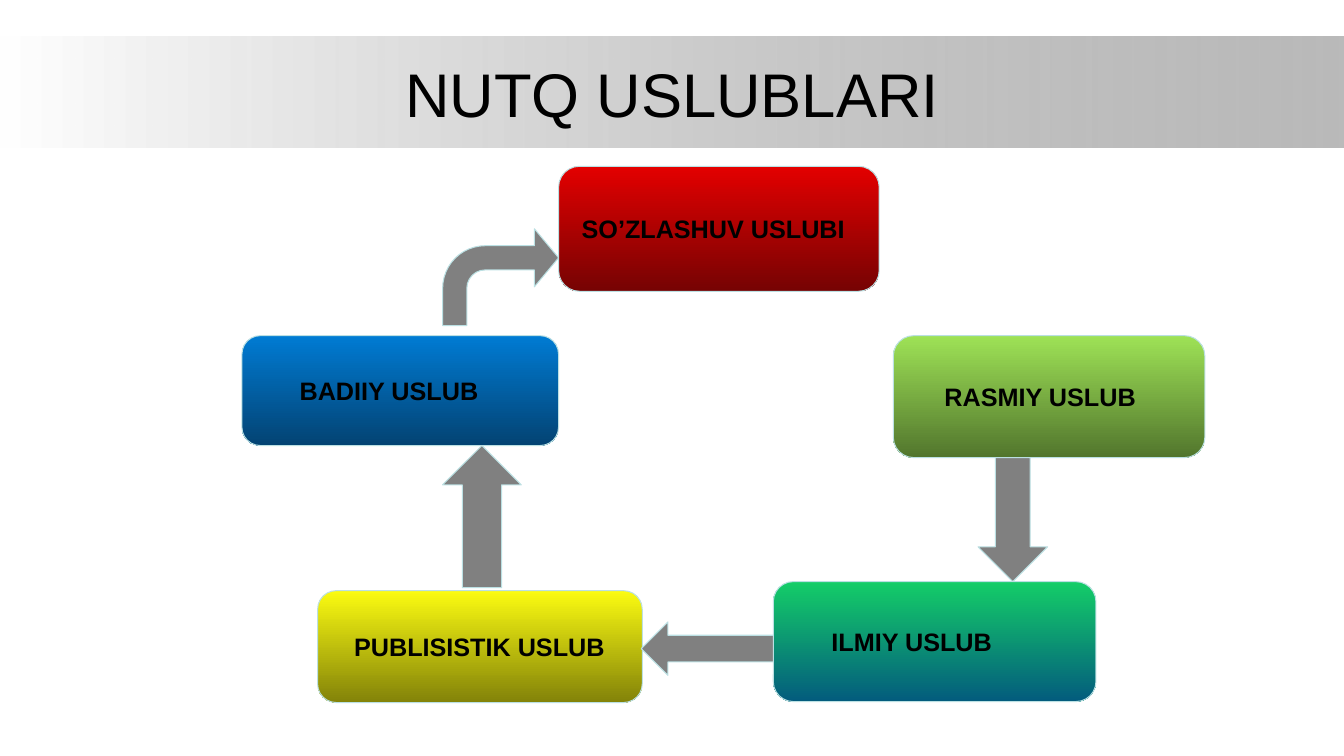
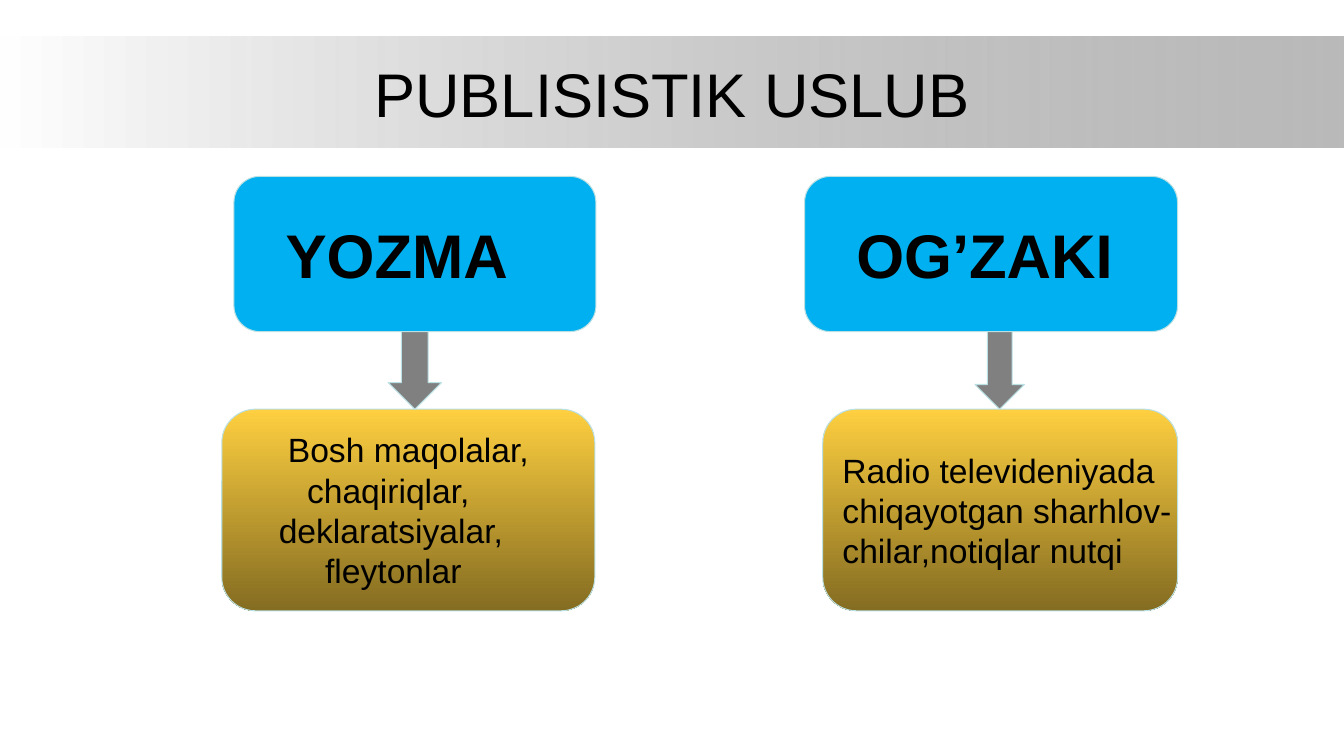
from lxml import etree
from pptx import Presentation
from pptx.dml.color import RGBColor
from pptx.enum.shapes import MSO_SHAPE
from pptx.enum.text import MSO_ANCHOR, PP_ALIGN
from pptx.oxml.ns import qn
from pptx.util import Inches, Pt

RECTANGLE = MSO_SHAPE.RECTANGLE
ROUNDED = MSO_SHAPE.ROUNDED_RECTANGLE
PROCESS = MSO_SHAPE.FLOWCHART_ALTERNATE_PROCESS
BENT, UP = MSO_SHAPE.BENT_ARROW, MSO_SHAPE.UP_ARROW
DOWN, LEFT = MSO_SHAPE.DOWN_ARROW, MSO_SHAPE.LEFT_ARROW
MIDDLE = MSO_ANCHOR.MIDDLE
CENTER, ALIGN_LEFT = PP_ALIGN.CENTER, PP_ALIGN.LEFT

SLIDE_WIDTH, SLIDE_HEIGHT = 13.33, 7.5
FONT = "Arial"
BLACK, WHITE, GRAY = "000000", "FFFFFF", "808080"
OUTLINE, SKY = "BBE0E3", "00B0F0"
GOLD = ("FECF40", "846C21")
BAND_OPACITY = 54
TITLE_SIZE = 44
RIGHTWARD, DOWNWARD = 0, 270


def color(value):
    return RGBColor.from_string(value)


def paint(shape, fill, angle=DOWNWARD):
    """Fill with one hex colour, or with a pair as a linear gradient."""
    if isinstance(fill, str):
        shape.fill.solid()
        shape.fill.fore_color.rgb = color(fill)
        return
    shape.fill.gradient()
    shape.fill.gradient_angle = angle
    for stop, value in zip(shape.fill.gradient_stops, fill):
        stop.color.rgb = color(value)


def add_shape(slide, kind, box, fill, angle=DOWNWARD, outline=OUTLINE):
    shape = slide.shapes.add_shape(kind, *map(Inches, box))
    shape.shadow.inherit = False
    paint(shape, fill, angle)
    if outline:
        shape.line.color.rgb = color(outline)
        shape.line.width = Pt(0.75)
    else:
        shape.line.fill.background()
    return shape


def write_lines(frame, lines, size, bold=False, align=ALIGN_LEFT):
    """Write (text, indent in inches) lines, vertically centred."""
    frame.vertical_anchor = MIDDLE
    style = {"name": FONT, "size": Pt(size), "bold": bold}
    for index, (text, indent) in enumerate(lines):
        paragraph = frame.paragraphs[0] if index == 0 else frame.add_paragraph()
        paragraph.alignment = align
        if indent:
            paragraph._p.get_or_add_pPr().set("marL", str(Inches(indent)))
        run = paragraph.add_run()
        run.text = text
        for name, value in style.items():
            setattr(run.font, name, value)
        run.font.color.rgb = color(BLACK)


def add_card(slide, box, fill, lines, size, bold=True, kind=ROUNDED):
    card = add_shape(slide, kind, box, fill)
    card.text_frame.word_wrap = False
    write_lines(card.text_frame, lines, size, bold)


def add_arrow(slide, kind, box, adjustments=()):
    arrow = add_shape(slide, kind, box, GRAY)
    for index, value in enumerate(adjustments):
        arrow.adjustments[index] = value


def add_titled_slide(presentation, title):
    """Add a blank slide with the fading band and a centred title."""
    slide = presentation.slides.add_slide(presentation.slide_layouts[6])
    band = add_shape(slide, RECTANGLE, (0, 0.36, SLIDE_WIDTH, 1.1),
                     (WHITE, GRAY), RIGHTWARD, outline=None)
    end_color = band._element.spPr.findall(".//" + qn("a:srgbClr"))[-1]
    etree.SubElement(end_color, qn("a:alpha")).set("val", str(BAND_OPACITY * 1000))
    box = slide.shapes.add_textbox(*map(Inches, (0.67, 0.3, 12, 1.25)))
    box.text_frame.word_wrap = True
    write_lines(box.text_frame, [(title, 0)], TITLE_SIZE, align=CENTER)
    return slide


def build_styles_cycle(presentation):
    slide = add_titled_slide(presentation, "NUTQ USLUBLARI")
    styles = [
        ("SO’ZLASHUV USLUBI", 0.07, (5.54, 1.65, 3.18, 1.24), ("E30000", "760303"), PROCESS),
        ("RASMIY USLUB", 0.35, (8.86, 3.33, 3.09, 1.21), ("9EE256", "52762D"), ROUNDED),
        ("ILMIY USLUB", 0.42, (7.67, 5.77, 3.2, 1.19), ("14CD68", "035C7D"), ROUNDED),
        ("PUBLISISTIK USLUB", 0.21, (3.15, 5.86, 3.22, 1.11), ("FBFB11", "838309"), ROUNDED),
        ("BADIIY USLUB", 0.42, (2.4, 3.33, 3.14, 1.09), ("007BD3", "034373"), ROUNDED),
    ]
    for text, indent, box, fill, kind in styles:
        add_card(slide, box, fill, [(text, indent)], 18, kind=kind)
    add_arrow(slide, BENT, (4.39, 2.27, 1.15, 0.96), (0.25, 0.3, 0.25, 0.44))
    add_arrow(slide, DOWN, (9.7, 4.54, 0.69, 1.23))
    add_arrow(slide, LEFT, (6.36, 6.17, 1.31, 0.53))
    add_arrow(slide, UP, (4.39, 4.42, 0.78, 1.41))


def add_branch(slide, heading, head_span, lines, body_span, arrow_span):
    """Stack heading, arrow and details; each span is (left, width)."""
    top, head_height, arrow_height, body_height = 1.75, 1.54, 0.77, 2
    arrow_top = top + head_height
    body_top = arrow_top + arrow_height

    def box(span, box_top, height):
        left, width = span
        return left, box_top, width, height

    add_card(slide, box(head_span, top, head_height), SKY, [(heading, 0.34)], 44)
    add_card(slide, box(body_span, body_top, body_height), GOLD, lines, 24, bold=False)
    add_arrow(slide, DOWN, box(arrow_span, arrow_top, arrow_height))


def build_publicistic_style(presentation):
    slide = add_titled_slide(presentation, "PUBLISISTIK USLUB")
    written = [("Bosh maqolalar,", 0.46), ("chaqiriqlar,", 0.65),
               ("deklaratsiyalar,", 0.37), ("fleytonlar", 0.83)]
    spoken = [("Radio televideniyada", 0), ("chiqayotgan sharhlov-", 0),
              ("chilar,notiqlar nutqi", 0)]
    add_branch(slide, "YOZMA", (2.32, 3.59), written, (2.2, 3.7), (3.85, 0.53))
    add_branch(slide, "OG’ZAKI", (7.98, 3.7), spoken, (8.16, 3.52), (9.67, 0.49))


def main():
    presentation = Presentation()
    presentation.slide_width = Inches(SLIDE_WIDTH)
    presentation.slide_height = Inches(SLIDE_HEIGHT)
    build_styles_cycle(presentation)
    build_publicistic_style(presentation)
    presentation.save("out.pptx")


if __name__ == "__main__":
    main()
